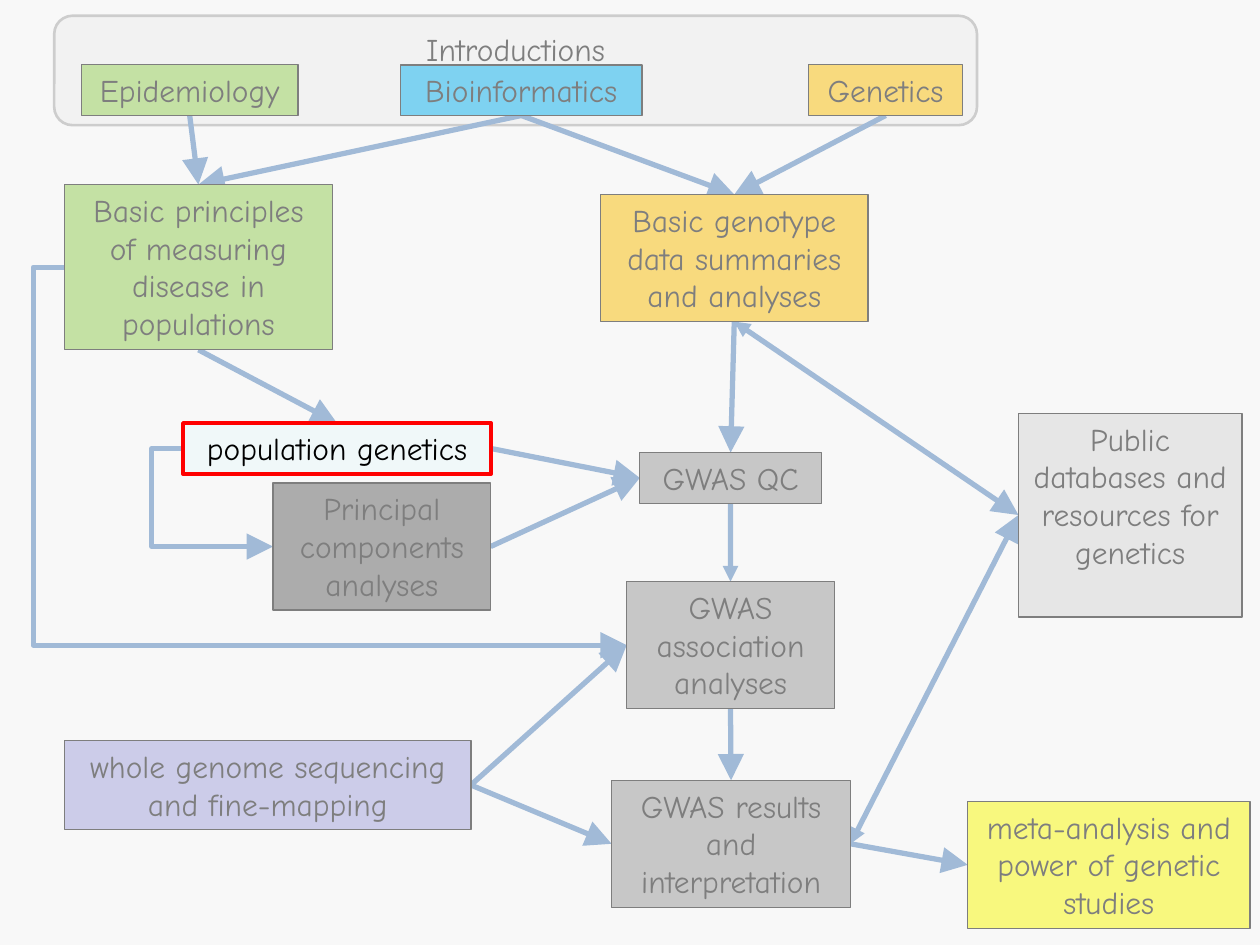
from lxml import etree
from pptx import Presentation
from pptx.dml.color import RGBColor
from pptx.enum import shapes, text
from pptx.oxml import ns
from pptx.util import Pt

BLACK = RGBColor(0, 0, 0)
BLUE = RGBColor(0x4A, 0x7E, 0xBB)
GREEN = RGBColor(0x92, 0xD0, 0x50)
SKY = RGBColor(0, 0xB0, 0xF0)
GOLD = RGBColor(0xFF, 0xC0, 0)
GREY = RGBColor(0x99, 0x99, 0x99)
DARK = RGBColor(0x60, 0x60, 0x60)
LIGHT = RGBColor(0xD9, 0xD9, 0xD9)
LILAC = RGBColor(0xA3, 0xA3, 0xE0)
YELLOW = RGBColor(0xFF, 0xFF, 0)
ICE = RGBColor(0xF0, 0xF8, 0xF9)
RED = RGBColor(0xFF, 0, 0)
PALE = RGBColor(0xF2, 0xF2, 0xF2)
EDGE = RGBColor(0xA6, 0xA6, 0xA6)

TOP, LEFT, BOTTOM, RIGHT = range(4)
ROW, LINE = 29, 21.8

BOXES = {
    "meta": ("meta-analysis and power of genetic studies", 553, 457.9, 161.3, 3, YELLOW, 0.75),
    "gene": ("Genetics", 462.2, 37, 87.8, 1, GOLD, 0.75),
    "result": ("GWAS results and interpretation", 349.5, 445.9, 136.5, 3, GREY, 0.75),
    "qc": ("GWAS QC", 365.6, 258.6, 103.8, 1, GREY, 0.75),
    "basic": ("Basic principles of measuring disease in populations", 36.9, 105.5, 153, 4, GREEN, 0.75),
    "pca": ("Principal components analyses", 156, 276, 124.4, 3, DARK, 0.75),
    "geno": ("Basic genotype data summaries and analyses", 343.1, 111.2, 153, 3, GOLD, 0.75),
    "assoc": ("GWAS association analyses", 358.1, 332.4, 118.7, 3, GREY, 0.75),
    "bio": ("Bioinformatics", 228.9, 37, 138, 1, SKY, 1),
    "public": ("Public databases and resources for genetics", 582, 236.2, 127.6, 5, LIGHT, 1),
    "whole": ("whole genome sequencing and fine-mapping", 36.9, 423.2, 232.2, 2, LILAC, 1),
    "epi": ("Epidemiology", 46.5, 37, 123.8, 1, GREEN, 0.75),
    "pop": ("population genetics", 104.6, 241.8, 176, 1, ICE, 2.25),
}
BIG, SMALL = {"tailEnd": "lg"}, {"tailEnd": "med"}
BOTH = {"headEnd": "med", "tailEnd": "lg"}
LINKS = [
    ("gene", BOTTOM, "geno", TOP, BIG),
    ("epi", BOTTOM, "basic", TOP, BIG),
    ("bio", BOTTOM, "geno", TOP, BIG),
    ("bio", BOTTOM, "basic", TOP, BIG),
    ("geno", BOTTOM, "qc", TOP, BIG),
    ("qc", BOTTOM, "assoc", TOP, SMALL),
    ("assoc", BOTTOM, "result", TOP, BIG),
    ("result", RIGHT, "meta", LEFT, BIG),
    ("pop", RIGHT, "qc", LEFT, BIG),
    ("pca", RIGHT, "qc", LEFT, BIG),
    ("result", RIGHT, "public", LEFT, BOTH),
    ("geno", BOTTOM, "public", LEFT, BOTH),
    ("whole", RIGHT, "assoc", LEFT, BIG),
    ("whole", RIGHT, "result", LEFT, BIG),
    ("basic", BOTTOM, "pop", TOP, BIG),
]
BENDS = [("pop", "pca", -34900), ("basic", "assoc", -5600)]

deck = Presentation()
deck.slide_width, deck.slide_height = Pt(720), Pt(540)
slide = deck.slides.add_slide(deck.slide_layouts[6])
tree = slide.shapes._spTree


def put(obj, vals):
    for key, val in vals.items():
        setattr(obj, key, val)


def block(kind, place, fill, edge=None, width=0):
    shape = slide.shapes.add_shape(kind, *map(Pt, place))
    shape.shadow.inherit = False
    shape.fill.solid()
    shape.fill.fore_color.rgb = fill
    if edge is None:
        shape.line.fill.background()
    else:
        shape.line.color.rgb = edge
        shape.line.width = Pt(width)
    return shape


def label(shape, words, wrap=True, inset=3.6):
    frame = shape.text_frame
    put(frame, {"word_wrap": wrap, "margin_top": Pt(inset),
                "vertical_anchor": text.MSO_ANCHOR.TOP})
    para = frame.paragraphs[0]
    para.alignment = text.PP_ALIGN.CENTER
    run = para.add_run()
    run.text = words
    put(run.font, {"name": "Comic Neue", "size": Pt(18)})
    run.font.color.rgb = BLACK


def side(box, site):
    across, down = [(0.5, 0), (0, 0.5), (0.5, 1), (1, 0.5)][site]
    return int(box.left + box.width * across), int(box.top + box.height * down)


def link(kind, start, out, end, into, ends):
    line = slide.shapes.add_connector(kind, *side(start, out), *side(end, into))
    line.line.color.rgb = BLUE
    line.line.width = Pt(3)
    rule = line.line._get_or_add_ln()
    for tag, size in ends.items():
        etree.SubElement(rule, ns.qn("a:" + tag), type="triangle", w=size, len=size)
    etree.SubElement(line._element.spPr, ns.qn("a:effectLst"))
    tree.insert(3, line._element)
    return line


intro = block(shapes.MSO_SHAPE.ROUNDED_RECTANGLE, (31, 9, 527.3, 62.5), PALE, EDGE, 1.5)
label(intro, "Introductions", inset=5)

made = {}
for name, (words, left, top, width, rows, fill, edge) in BOXES.items():
    high = ROW + LINE * (rows - 1)
    ink = RED if name == "pop" else BLACK
    made[name] = block(shapes.MSO_SHAPE.RECTANGLE, (left, top, width, high), fill, ink, edge)
    label(made[name], words, rows > 1)

for start, out, end, into, ends in LINKS:
    line = link(shapes.MSO_CONNECTOR.STRAIGHT, made[start], out, made[end], into, ends)
    line.begin_connect(made[start], out)
    line.end_connect(made[end], into)

for start, end, bend in BENDS:
    line = link(shapes.MSO_CONNECTOR.ELBOW, made[start], LEFT, made[end], LEFT, BIG)
    guides = line._element.spPr.find(ns.qn("a:prstGeom")).find(ns.qn("a:avLst"))
    etree.SubElement(guides, ns.qn("a:gd"), name="adj1", fmla=f"val {bend}")

veil = block(shapes.MSO_SHAPE.RECTANGLE, (0, -2, 720, 542), PALE)
tone = veil._element.spPr.find(ns.qn("a:solidFill"))[0]
etree.SubElement(tone, ns.qn("a:alpha"), val="52000")
tree.append(made["pop"]._element)

deck.save("out.pptx")
